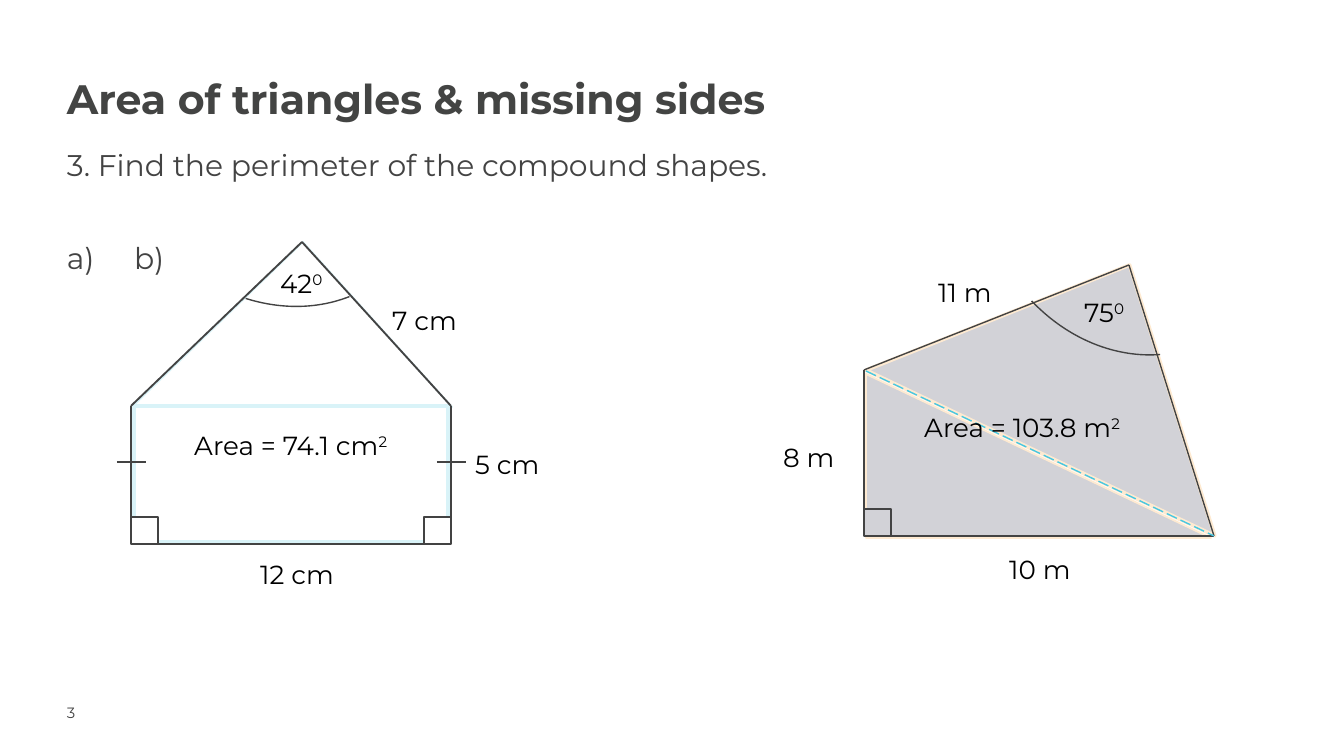
from dataclasses import dataclass
from itertools import pairwise

from lxml import etree
from pptx import Presentation
from pptx.dml.color import RGBColor
from pptx.enum.dml import MSO_LINE
from pptx.enum.shapes import MSO_CONNECTOR, MSO_SHAPE
from pptx.enum.text import MSO_ANCHOR, MSO_AUTO_SIZE, PP_ALIGN
from pptx.oxml.ns import qn
from pptx.util import Emu, Pt

FONT = "Montserrat"
TITLE_GREY = RGBColor(0x43, 0x44, 0x43)
GREY = RGBColor(0x43, 0x43, 0x43)
BLACK = RGBColor(0x00, 0x00, 0x00)
WHITE = RGBColor(0xFF, 0xFF, 0xFF)
PALE_BLUE = RGBColor(0xD9, 0xF3, 0xF8)
PALE_ORANGE = RGBColor(0xFE, 0xEA, 0xD1)
SILVER = RGBColor(0xD2, 0xD2, 0xD7)
CYAN = RGBColor(0x46, 0xC7, 0xE1)

Point = tuple[int, int]


def px(length: float) -> Emu:
    return Emu(round(length * 914400 / 134.4))


@dataclass
class Figure:
    kind: MSO_SHAPE
    left: int
    top: int
    width: int
    height: int
    fill: RGBColor | None
    line: RGBColor
    weight: float
    rotation: float = 0
    adjustments: tuple[float, ...] = ()


@dataclass
class Label:
    left: int
    top: int
    text: str
    superscript: str = ""
    width: int = 108


def draw_figure(slide, figure: Figure) -> None:
    shape = slide.shapes.add_shape(figure.kind, px(figure.left), px(figure.top),
                                   px(figure.width), px(figure.height))
    shape.shadow.inherit = False
    shape.rotation = figure.rotation
    for index, value in enumerate(figure.adjustments):
        shape.adjustments[index] = value
    if figure.fill is None:
        shape.fill.background()
    else:
        shape.fill.solid()
        shape.fill.fore_color.rgb = figure.fill
    shape.line.color.rgb = figure.line
    shape.line.width = Pt(figure.weight)


def draw_line(slide, start: Point, end: Point, weight: float,
              color: RGBColor = GREY, dash: MSO_LINE | None = None) -> None:
    line = slide.shapes.add_connector(MSO_CONNECTOR.STRAIGHT,
                                      *map(px, start), *map(px, end))
    line.line.color.rgb = color
    line.line.width = Pt(weight)
    if dash is not None:
        line.line.dash_style = dash
    etree.SubElement(line._element.spPr, qn("a:effectLst"))


def draw_outline(slide, corners: list[Point], weight: float) -> None:
    for start, end in pairwise(corners + corners[:1]):
        draw_line(slide, start, end, weight)


def set_font(paragraph, size: int, color: RGBColor, bold: bool = False) -> None:
    paragraph.font.name = FONT
    paragraph.font.size = Pt(size)
    paragraph.font.color.rgb = color
    paragraph.font.bold = bold


def draw_label(slide, label: Label) -> None:
    box = slide.shapes.add_textbox(px(label.left), px(label.top), px(label.width), px(46))
    box.text_frame.word_wrap = True
    paragraph = box.text_frame.paragraphs[0]
    paragraph.add_run().text = label.text
    if label.superscript:
        power = paragraph.add_run()
        power.text = label.superscript
        power._r.get_or_add_rPr().set("baseline", "30000")
    set_font(paragraph, 14, BLACK)


def place_text(shape, left: int, top: int, width: int, height: int):
    shape.left, shape.top, shape.width, shape.height = map(px, (left, top, width, height))
    frame = shape.text_frame
    frame.margin_left = frame.margin_top = frame.margin_right = frame.margin_bottom = 0
    frame.word_wrap = True
    frame.auto_size = MSO_AUTO_SIZE.NONE
    frame.vertical_anchor = MSO_ANCHOR.TOP
    return frame


HOUSE_FIGURES = [
    Figure(MSO_SHAPE.ISOSCELES_TRIANGLE, 132, 242, 320, 165, WHITE, PALE_BLUE, 1,
           adjustments=(0.534,)),
    Figure(MSO_SHAPE.ARC, 121, -34, 302, 351, None, GREY, 0.75, 137.9, (171.354, 192.994)),
    Figure(MSO_SHAPE.RECTANGLE, 134, 406, 314, 136, WHITE, PALE_BLUE, 2),
]
HOUSE_OUTLINE = [(451, 544), (451, 406), (302, 242), (131, 406), (131, 544)]
HOUSE_RIGHT_ANGLES = [
    Figure(MSO_SHAPE.RECTANGLE, left, 517, 27, 27, WHITE, GREY, 1) for left in (131, 424)
]
QUAD_FIGURES = [
    Figure(MSO_SHAPE.RIGHT_TRIANGLE, 866, 374, 345, 164, SILVER, PALE_ORANGE, 1),
    Figure(MSO_SHAPE.RECTANGLE, 864, 509, 27, 27, SILVER, GREY, 1),
    Figure(MSO_SHAPE.ISOSCELES_TRIANGLE, 892, 255, 386, 208, SILVER, PALE_ORANGE, 2, 25.4),
]
QUAD_OUTLINE = [(864, 536), (864, 370), (1129, 265), (1214, 536)]
QUAD_ANGLE = Figure(MSO_SHAPE.ARC, 981, 8, 302, 351, None, GREY, 0.75, 155.1,
                    (171.354, 201.269))
LABELS = [
    Label(247, 552, "12 cm"),
    Label(267, 261, "42", "0"),
    Label(462, 442, "5 cm"),
    Label(379, 298, "7 cm"),
    Label(181, 423, "Area = 74.1 cm", "2", 233),
    Label(770, 435, "8 m"),
    Label(996, 547, "10 m"),
    Label(1071, 290, "75", "0"),
    Label(925, 270, "11 m"),
    Label(911, 405, "Area = 103.8 m", "2", 233),
]


def main() -> None:
    prs = Presentation()
    prs.slide_width, prs.slide_height = px(1344), px(756)
    slide = prs.slides.add_slide(prs.slide_layouts[1])

    # Title
    title = place_text(slide.shapes.title, 67, 66, 991, 70).paragraphs[0]
    title.text = "Area of triangles & missing sides"
    title.alignment = PP_ALIGN.LEFT
    title.line_spacing = 1.15
    set_font(title, 22, TITLE_GREY, bold=True)

    # Question and part letters
    body = place_text(slide.placeholders[1], 67, 136, 1210, 620)
    body.text = "3. Find the perimeter of the compound shapes.\na)\tb)"
    for paragraph, gap in zip(body.paragraphs, (0, 25)):
        paragraph.line_spacing = 1.3
        paragraph.space_before = Pt(gap)
        properties = paragraph._p.get_or_add_pPr()
        properties.set("marL", "0")
        properties.set("indent", "0")
        etree.SubElement(properties, qn("a:buNone"))
        tabs = etree.SubElement(properties, qn("a:tabLst"))
        etree.SubElement(tabs, qn("a:tab"), pos=str(px(672)), algn="l")
        set_font(paragraph, 16, GREY)

    # Page number
    number_box = slide.shapes.add_textbox(0, 0, 0, 0)
    page_number = place_text(number_box, 67, 704, 106, 27).paragraphs[0]
    page_number.text = "3"
    set_font(page_number, 8, GREY)

    # Part a: house with equal-side ticks
    for figure in HOUSE_FIGURES:
        draw_figure(slide, figure)
    draw_outline(slide, HOUSE_OUTLINE, 1)
    for tick_left in (117, 437):
        draw_line(slide, (tick_left, 462), (tick_left + 29, 462), 0.75)
    for right_angle in HOUSE_RIGHT_ANGLES:
        draw_figure(slide, right_angle)

    # Part b: quadrilateral with its diagonal
    for figure in QUAD_FIGURES:
        draw_figure(slide, figure)
    draw_outline(slide, QUAD_OUTLINE, 0.75)
    draw_figure(slide, QUAD_ANGLE)
    draw_line(slide, (866, 371), (1214, 536), 0.75, CYAN, MSO_LINE.LONG_DASH)

    # Measurements
    for label in LABELS:
        draw_label(slide, label)

    prs.save("out.pptx")


if __name__ == "__main__":
    main()
